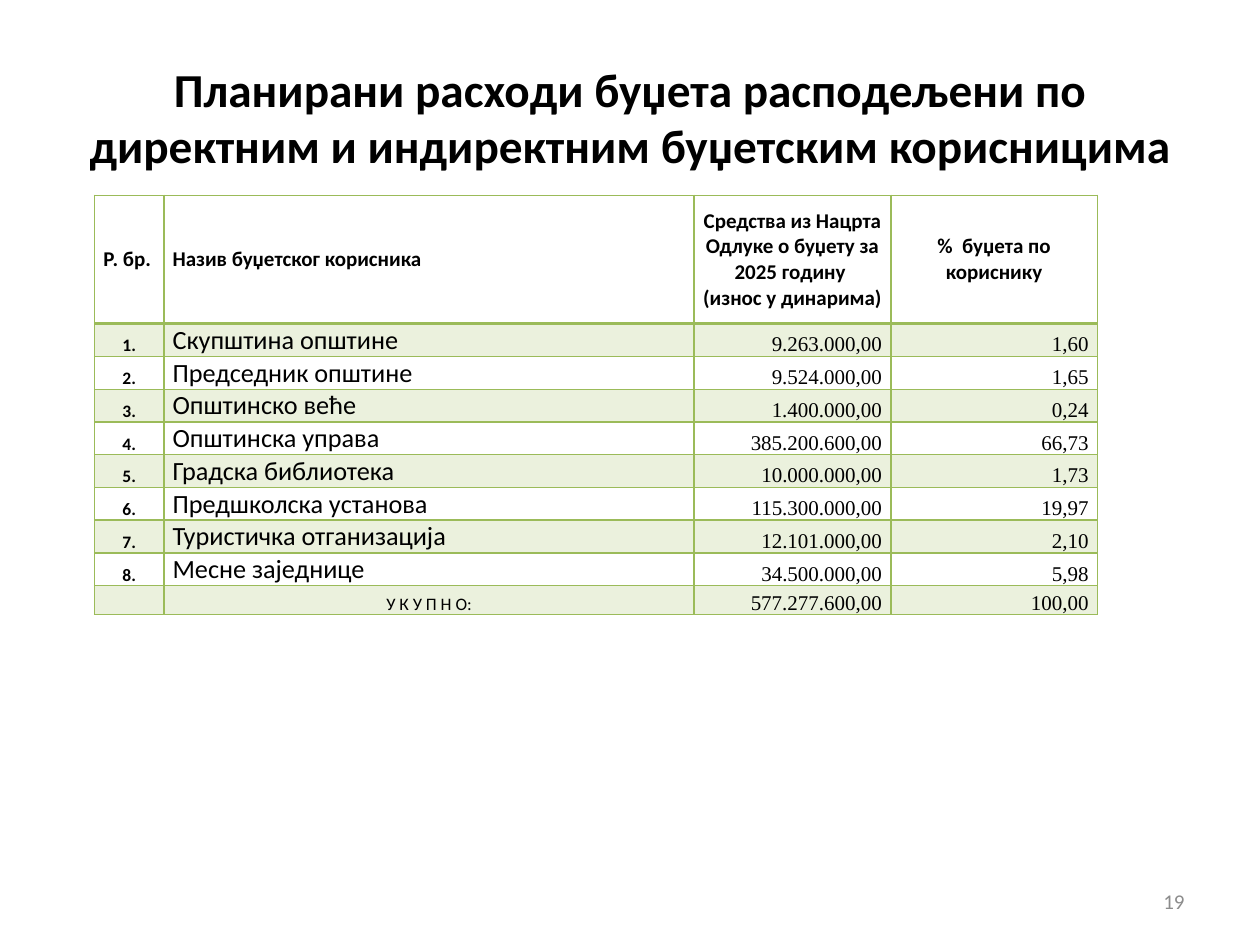
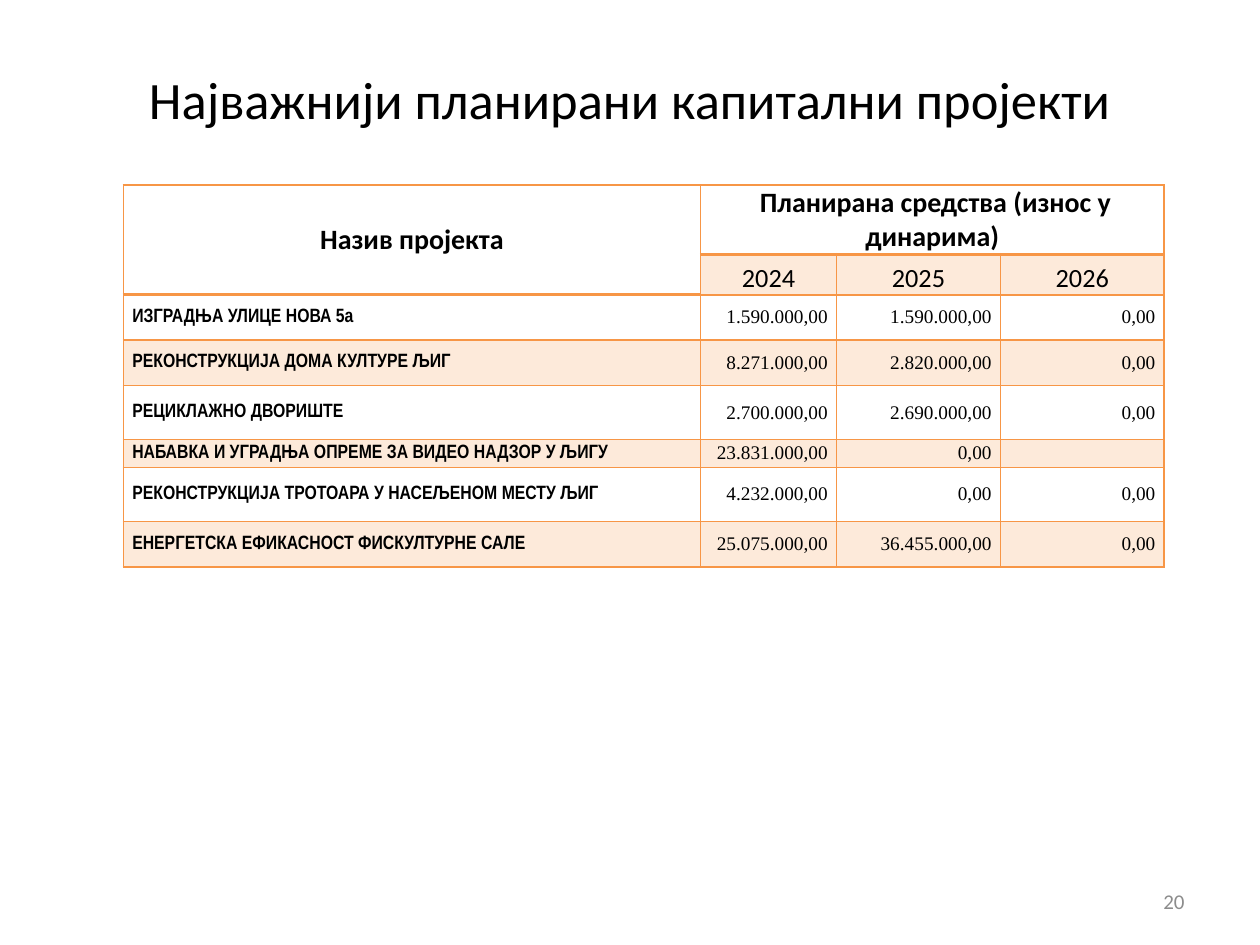
from collections import namedtuple

from lxml import etree
from pptx import Presentation
from pptx.dml.color import RGBColor
from pptx.enum.text import MSO_ANCHOR, MSO_AUTO_SIZE, PP_ALIGN
from pptx.oxml.ns import qn
from pptx.util import Inches, Pt

LEFT, CENTER, RIGHT = PP_ALIGN.LEFT, PP_ALIGN.CENTER, PP_ALIGN.RIGHT
MIDDLE, BOTTOM = MSO_ANCHOR.MIDDLE, MSO_ANCHOR.BOTTOM
TITLE_ONLY = 5

Style = namedtuple("Style", "size font bold align anchor")


class Theme:
    TEXT, PAGE = "000000", "8C8C8C"
    GREEN, ORANGE = "9BBB59", "F79646"
    BAND_ALPHA = 20
    THIN, THICK = 1, 2
    SANS, SERIF, NARROW = "Calibri", "Times New Roman", "Arial Narrow"
    PAGE_NUMBER = Style(12, SANS, False, RIGHT, MIDDLE)
    HEAD = Style(12, SANS, True, CENTER, MIDDLE)
    HEAD_LEFT = HEAD._replace(align=LEFT)
    ORDINAL = Style(10, SANS, True, CENTER, BOTTOM)
    USER = Style(15, SANS, False, LEFT, BOTTOM)
    AMOUNT = Style(12, SERIF, False, RIGHT, BOTTOM)
    TOTAL = ORDINAL._replace(bold=False)
    BIG_HEAD = HEAD._replace(size=16)
    YEAR = Style(15, SANS, False, CENTER, BOTTOM)
    PROJECT = Style(11, NARROW, True, LEFT, MIDDLE)
    PROJECT_AMOUNT = Style(11, SERIF, False, RIGHT, MIDDLE)


USERS = [
    ("Скупштина општине", "9.263.000,00", "1,60"),
    ("Председник општине", "9.524.000,00", "1,65"),
    ("Општинско веће", "1.400.000,00", "0,24"),
    ("Општинска управа", "385.200.600,00", "66,73"),
    ("Градска библиотека", "10.000.000,00", "1,73"),
    ("Предшколска установа", "115.300.000,00", "19,97"),
    ("Туристичка отганизација", "12.101.000,00", "2,10"),
    ("Месне заједнице", "34.500.000,00", "5,98"),
]
PROJECTS = [
    ("ИЗГРАДЊА УЛИЦЕ НОВА 5а", "1.590.000,00", "1.590.000,00", "0,00"),
    ("РЕКОНСТРУКЦИЈА ДОМА КУЛТУРЕ ЉИГ", "8.271.000,00", "2.820.000,00", "0,00"),
    ("РЕЦИКЛАЖНО ДВОРИШТЕ", "2.700.000,00", "2.690.000,00", "0,00"),
    ("НАБАВКА И УГРАДЊА ОПРЕМЕ ЗА ВИДЕО НАДЗОР У ЉИГУ", "23.831.000,00", "0,00", ""),
    ("РЕКОНСТРУКЦИЈА ТРОТОАРА У НАСЕЉЕНОМ МЕСТУ ЉИГ", "4.232.000,00", "0,00", "0,00"),
    ("ЕНЕРГЕТСКА ЕФИКАСНОСТ ФИСКУЛТУРНЕ САЛЕ", "25.075.000,00", "36.455.000,00", "0,00"),
]

# Each row pairs its texts with its cell styles; head_depth counts header rows per column.
SLIDES = [
    dict(
        page=19,
        title="Планирани расходи буџета расподељени по директним и индиректним буџетским корисницима",
        title_style=Style(27, Theme.SANS, True, CENTER, MIDDLE),
        title_height=1.25,
        color=Theme.GREEN,
        at=(0.75, 1.55),
        widths=(0.55, 4.21, 1.56, 1.64),
        heights=[1.02] + [0.26] * len(USERS) + [0.23],
        head_depth=(1, 1, 1, 1),
        merges=[],
        rows=[
            (("Р. бр.", "Назив буџетског корисника",
              "Средства из Нацрта Одлуке о буџету за 2025 годину  (износ у динарима)",
              "%  буџета по кориснику"),
             (Theme.HEAD_LEFT, Theme.HEAD_LEFT, Theme.HEAD, Theme.HEAD)),
            *[((f"{n}.", *user), (Theme.ORDINAL, Theme.USER, Theme.AMOUNT, Theme.AMOUNT))
              for n, user in enumerate(USERS, 1)],
            (("", "У К У П Н О:", "577.277.600,00", "100,00"),
             (Theme.TOTAL, Theme.TOTAL, Theme.AMOUNT, Theme.AMOUNT)),
        ],
    ),
    dict(
        page=20,
        title="Најважнији планирани капитални пројекти",
        title_style=Style(30, Theme.SANS, False, CENTER, MIDDLE),
        title_height=0.96,
        color=Theme.ORANGE,
        at=(0.98, 1.47),
        widths=(4.58, 1.08, 1.3, 1.3),
        heights=[0.55, 0.32, 0.36, 0.36, 0.43, 0.22, 0.43, 0.36],
        head_depth=(2, 1, 1, 1),
        merges=[((0, 0), (1, 0)), ((0, 1), (0, 3))],
        rows=[
            (("Назив пројекта", " Планирана средства (износ у динарима)", "", ""),
             (Theme.BIG_HEAD,) + (Theme.BIG_HEAD._replace(anchor=BOTTOM),) * 3),
            (("", "2024", "2025", "2026"), (Theme.YEAR,) * 4),
            *[(project, (Theme.PROJECT,) + (Theme.PROJECT_AMOUNT,) * 3) for project in PROJECTS],
        ],
    ),
]


def write(tf, text, style, color=Theme.TEXT):
    p = tf.paragraphs[0]
    p.alignment = style.align
    if not text:  # keeps an empty cell from growing to the default type size
        etree.SubElement(p._p, qn("a:endParaRPr"), sz=str(style.size * 100))
        return
    r = p.add_run()
    r.text = text
    r.font.size, r.font.name, r.font.bold = Pt(style.size), style.font, style.bold
    r.font.color.rgb = RGBColor.from_string(color)


def add_borders(cell, color, widths):
    """Draw the left, right, top and bottom edges, given in that order."""
    tcPr = cell._tc.get_or_add_tcPr()
    for side, width in zip("LRTB", widths):
        ln = etree.SubElement(tcPr, qn(f"a:ln{side}"), w=str(Pt(width)))
        fill = etree.SubElement(ln, qn("a:solidFill"))
        etree.SubElement(fill, qn("a:srgbClr"), val=color)


def fill_band(cell, color):
    cell.fill.solid()
    cell.fill.fore_color.rgb = RGBColor.from_string(color)
    srgb = cell._tc.tcPr.find(f"{qn('a:solidFill')}/{qn('a:srgbClr')}")
    etree.SubElement(srgb, qn("a:alpha"), val=str(Theme.BAND_ALPHA * 1000))


def add_budget_table(s, d):
    rows, widths, heights, color = d["rows"], d["widths"], d["heights"], d["color"]
    box = [Inches(v) for v in (*d["at"], sum(widths), sum(heights))]
    table = s.shapes.add_table(len(rows), len(widths), *box).table
    table.first_row = table.horz_banding = False
    for column, width in zip(table.columns, widths):
        column.width = Inches(width)
    for row, height in zip(table.rows, heights):
        row.height = Inches(height)

    for i, (texts, styles) in enumerate(rows):
        for j, (text, style) in enumerate(zip(texts, styles)):
            cell, depth = table.cell(i, j), d["head_depth"][j]
            cell.margin_left = cell.margin_right = Inches(0.07)
            cell.margin_top = cell.margin_bottom = 0
            cell.vertical_anchor = style.anchor
            top = Theme.THICK if i == depth else Theme.THIN
            bottom = Theme.THICK if i == depth - 1 else Theme.THIN
            add_borders(cell, color, (Theme.THIN, Theme.THIN, top, bottom))
            if i >= depth and i % 2:
                fill_band(cell, color)
            else:
                cell.fill.background()
            write(cell.text_frame, text, style)
    for first, last in d["merges"]:
        table.cell(*first).merge(table.cell(*last))


def set_title(s, d):
    sp = s.shapes.title
    sp.left, sp.top, sp.width, sp.height = (
        Inches(v) for v in (0.5, 0.3, 9, d["title_height"]))
    tf = sp.text_frame
    tf.auto_size = MSO_AUTO_SIZE.NONE
    tf.vertical_anchor = d["title_style"].anchor
    write(tf, d["title"], d["title_style"])


def add_page_number(s, number):
    sp = s.shapes.add_textbox(Inches(7.17), Inches(6.95), Inches(2.33), Inches(0.4))
    tf = sp.text_frame
    tf.word_wrap = True
    tf.vertical_anchor = Theme.PAGE_NUMBER.anchor
    write(tf, str(number), Theme.PAGE_NUMBER, Theme.PAGE)


def main():
    prs = Presentation()
    prs.slide_width, prs.slide_height = Inches(10), Inches(7.5)
    for d in SLIDES:
        s = prs.slides.add_slide(prs.slide_layouts[TITLE_ONLY])
        set_title(s, d)
        add_budget_table(s, d)
        add_page_number(s, d["page"])
    prs.save("out.pptx")


if __name__ == "__main__":
    main()
